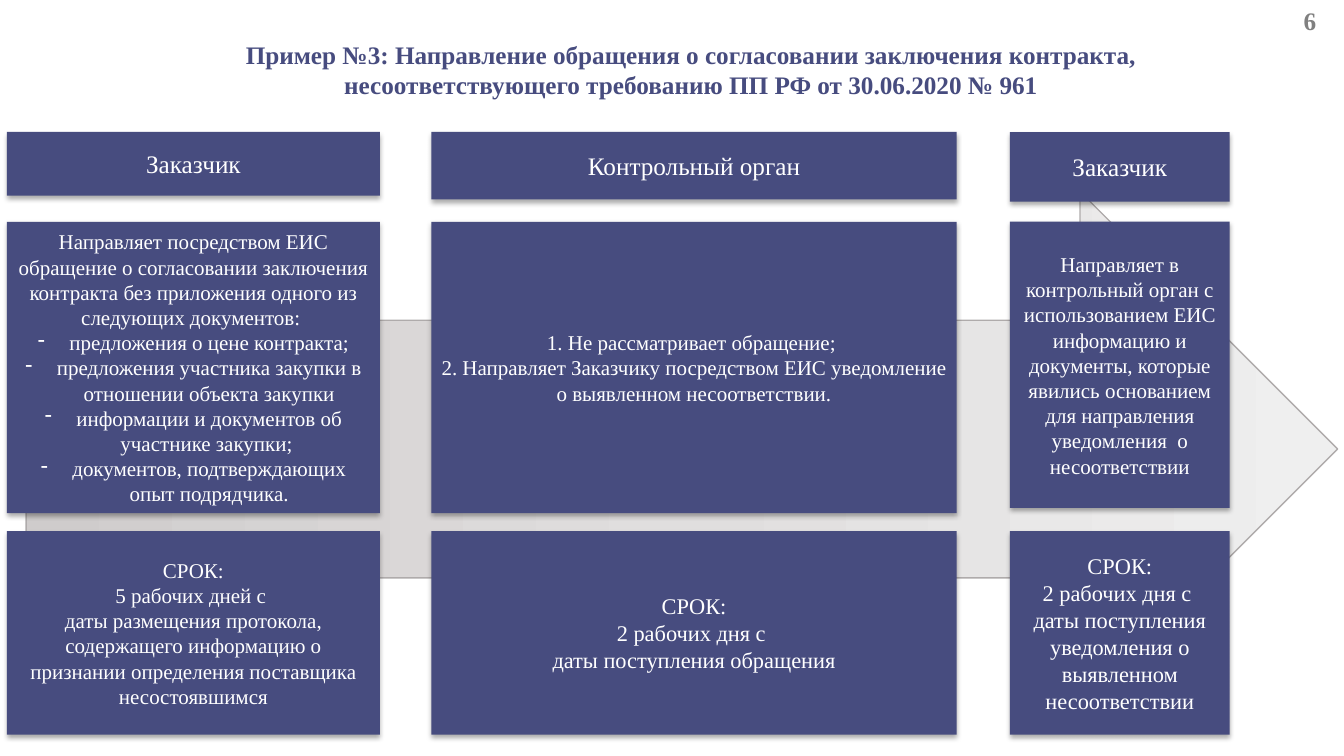
from copy import deepcopy
from lxml.etree import SubElement
from pptx import Presentation
from pptx.dml.color import RGBColor
from pptx.enum.shapes import MSO_SHAPE as Shape
from pptx.enum.text import MSO_ANCHOR as Anchor, PP_ALIGN as Align
from pptx.oxml.ns import qn
from pptx.util import Pt

COLORS = {"navy": "474C7F", "white": "FFFFFF", "grey": "808080", "edge": "AFABAB", "shadow": "000000"}
ARROW_STOPS = [(0, "CFCCCC"), (0.5, "E0DEDE"), (1, "EFEFEF")]
ARROW_BOX = (18.7, 136.8, 936.7, 367.9)
FONT = "Times New Roman"
BULLET = "- "
INDENT = 22.5

HEADINGS = [
    ((15.8, 30.2, 960, 38.9), "navy", [
        "Пример №3: Направление обращения о согласовании заключения контракта, ",
        "несоответствующего требованию ПП РФ от 30.06.2020 № 961 ",
    ]),
    ((878.4, -5, 114.5, 38.9), "grey", ["6"]),
]

ROW_TOPS = [94.3, 158.4, 379.4]
STAGES = [
    {"left": 5, "width": 266.4, "cells": [
        (45.4, 18, ["Заказчик"]),
        (208.1, 15, [
            "Направляет посредством ЕИС обращение о согласовании заключения "
            "контракта без приложения одного из следующих документов: ",
            "- предложения о цене контракта;",
            "- предложения участника закупки в отношении объекта закупки",
            "- информации и документов об участнике закупки; ",
            "- документов, подтверждающих опыт подрядчика.",
        ]),
        (145.4, 15, [
            "СРОК:",
            "5 рабочих дней с ",
            "даты размещения протокола, содержащего информацию о "
            "признании определения поставщика несостоявшимся",
        ]),
    ]},
    {"left": 308.2, "width": 375.1, "cells": [
        (48.2, 18, ["Контрольный орган"]),
        (208.1, 15, [
            "1. Не рассматривает обращение; ",
            "2. Направляет Заказчику посредством ЕИС уведомление о выявленном несоответствии.",
        ]),
        (145.4, 16, ["СРОК:", "2 рабочих дня с ", "даты поступления обращения"]),
    ]},
    {"left": 721.4, "width": 157, "cells": [
        (49.7, 18, ["Заказчик"]),
        (204.5, 15, [
            "Направляет в контрольный орган с использованием ЕИС информацию и документы, "
            "которые явились основанием для направления уведомления  о несоответствии",
        ]),
        (145.4, 16, [
            "СРОК:",
            "2 рабочих дня с ",
            "даты поступления уведомления о выявленном несоответствии",
        ]),
    ]},
]


def rgb(name):
    return RGBColor.from_string(COLORS[name])


def add_bullet(paragraph):
    props = paragraph._p.get_or_add_pPr()
    props.set("marL", str(Pt(INDENT)))
    props.set("indent", str(-Pt(INDENT)))
    SubElement(props, qn("a:buFontTx"))
    SubElement(props, qn("a:buChar"), char=BULLET.strip())


def write(frame, lines, size, color, bold=False):
    frame.word_wrap = True
    frame.vertical_anchor = Anchor.MIDDLE
    for number, line in enumerate(lines):
        paragraph = frame.add_paragraph() if number else frame.paragraphs[0]
        paragraph.alignment = Align.CENTER
        if line.startswith(BULLET):
            add_bullet(paragraph)
        run = paragraph.add_run()
        run.text = line.removeprefix(BULLET)
        for key, value in {"name": FONT, "size": Pt(size), "bold": bold}.items():
            setattr(run.font, key, value)
        run.font.color.rgb = rgb(color)


def add_shadow(box):
    effects = box._element.spPr.find(qn("a:effectLst"))
    outer = SubElement(effects, qn("a:outerShdw"), blurRad=str(Pt(3.5)), dist=str(Pt(2.2)),
                       dir="5400000", rotWithShape="0")
    tint = SubElement(outer, qn("a:srgbClr"), val=COLORS["shadow"])
    SubElement(tint, qn("a:alpha"), val="32000")


def add_arrow(slide):
    arrow = slide.shapes.add_shape(Shape.RIGHT_ARROW, *map(Pt, ARROW_BOX))
    arrow.shadow.inherit = False
    arrow.fill.gradient()
    arrow.fill.gradient_angle = 0
    stop_list = arrow._element.spPr.find(qn("a:gradFill")).find(qn("a:gsLst"))
    stop_list.append(deepcopy(stop_list[0]))
    for stop, (position, color) in zip(arrow.fill.gradient_stops, ARROW_STOPS):
        stop.position = position
        stop.color.rgb = RGBColor.from_string(color)
    arrow.line.color.rgb = rgb("edge")
    arrow.line.width = Pt(1)


def add_stage(slide, stage):
    for top, (height, size, lines) in zip(ROW_TOPS, stage["cells"]):
        place = map(Pt, (stage["left"], top, stage["width"], height))
        box = slide.shapes.add_shape(Shape.RECTANGLE, *place)
        box.shadow.inherit = False
        add_shadow(box)
        box.fill.solid()
        box.fill.fore_color.rgb = rgb("navy")
        box.line.fill.background()
        write(box.text_frame, lines, size, "white")


def main():
    deck = Presentation()
    deck.slide_width, deck.slide_height = Pt(960), Pt(540)
    slide = deck.slides.add_slide(deck.slide_layouts[6])
    for place, color, lines in HEADINGS:
        heading = slide.shapes.add_textbox(*map(Pt, place))
        write(heading.text_frame, lines, 18, color, bold=True)
    add_arrow(slide)
    for stage in STAGES:
        add_stage(slide, stage)
    deck.save("out.pptx")


if __name__ == "__main__":
    main()
